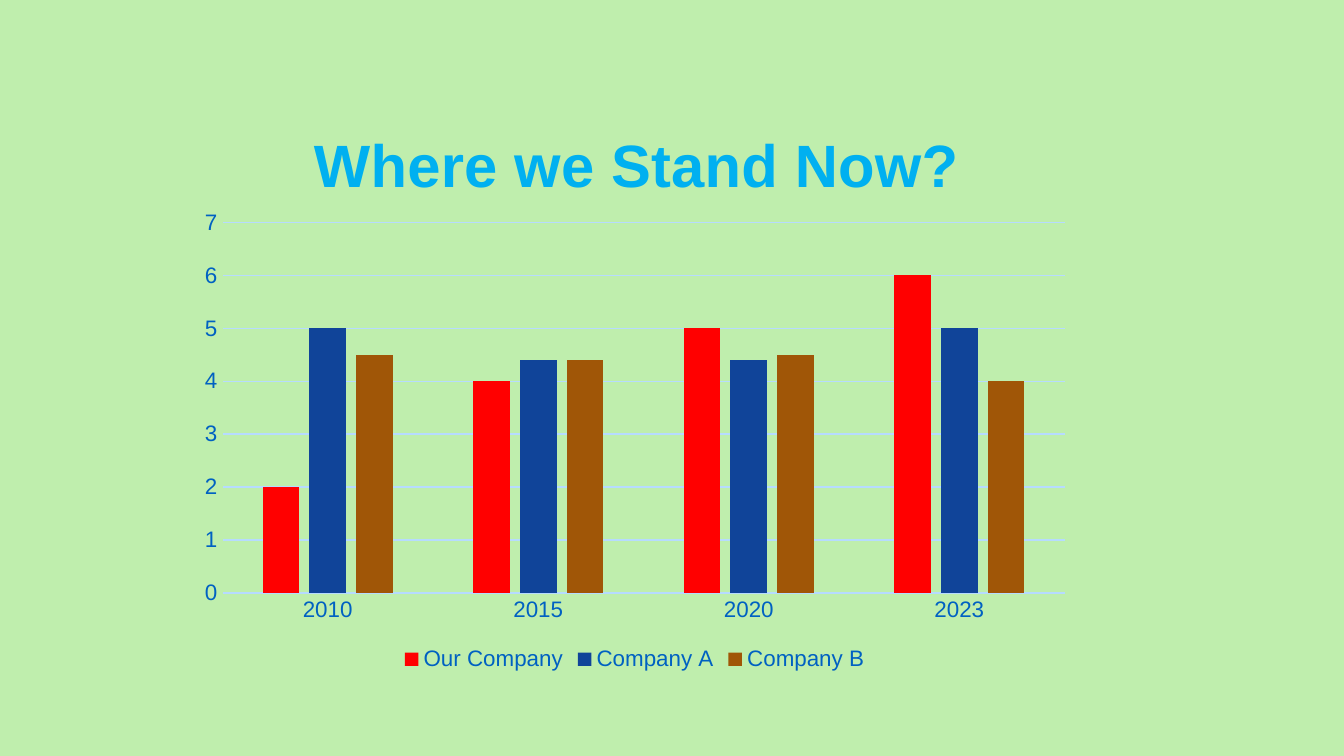
from lxml import etree
from pptx import Presentation
from pptx.chart.data import CategoryChartData
from pptx.dml.color import RGBColor
from pptx.enum.chart import XL_CHART_TYPE, XL_LEGEND_POSITION, XL_TICK_MARK
from pptx.oxml.ns import qn
from pptx.util import Pt

COLUMN = XL_CHART_TYPE.COLUMN_CLUSTERED
BOTTOM = XL_LEGEND_POSITION.BOTTOM
NO_TICK = XL_TICK_MARK.NONE

GREEN = RGBColor(0xBF, 0xEE, 0xAD)
INK = RGBColor(0x00, 0x0C, 0x18)
SKY = RGBColor(0x00, 0xB0, 0xF0)
LABEL = RGBColor(0x00, 0x61, 0xC2)
GRID = RGBColor(0xB6, 0xDB, 0xFF)
RED = RGBColor(0xFF, 0x00, 0x00)
NAVY = RGBColor(0x10, 0x44, 0x99)
BROWN = RGBColor(0xA0, 0x56, 0x07)

FONT = "Arial"
YEARS = ["2010", "2015", "2020", "2023"]
SERIES = [
    ("Our Company", [2, 4, 5, 6], RED),
    ("Company A", [5, 4.4, 4.4, 5], NAVY),
    ("Company B", [4.5, 4.4, 4.5, 4], BROWN),
]


def set_font(font, size, color, bold=False):
    font.name = FONT
    font.size = Pt(size)
    font.color.rgb = color
    font.bold = bold


def set_line(line, color):
    line.color.rgb = color
    line.width = Pt(0.75)


def set_place(part, index, **values):
    """Place a chart part by fractions of the chart's size."""
    for old in part.findall(qn("c:layout")):
        part.remove(old)
    layout = etree.Element(qn("c:layout"))
    manual = etree.SubElement(layout, qn("c:manualLayout"))
    for name, value in values.items():
        etree.SubElement(manual, qn("c:" + name)).set("val", str(value))
    part.insert(index, layout)


def add_title(chart):
    title = chart.chart_title
    frame = title.text_frame
    frame.text = "Where we Stand Now?"
    set_font(frame.paragraphs[0].runs[0].font, 32, SKY, True)
    set_place(title._element, 1, xMode="edge", yMode="edge", x=0.13, y=0.06)


def style_axes(chart):
    for axis in (chart.category_axis, chart.value_axis):
        axis.major_tick_mark = NO_TICK
        axis.minor_tick_mark = NO_TICK
        set_font(axis.tick_labels.font, 12, LABEL)
    set_line(chart.category_axis.format.line, GRID)
    scale = chart.value_axis
    scale.minimum_scale, scale.maximum_scale = 0, 7
    scale.major_unit = 1
    scale.format.line.fill.background()
    set_line(scale.major_gridlines.format.line, GRID)


def style_bars(chart):
    plot = chart.plots[0]
    plot.vary_by_categories = False
    plot.gap_width = 219
    plot.overlap = -27
    for bars, (_, _, color) in zip(plot.series, SERIES):
        bars.format.fill.solid()
        bars.format.fill.fore_color.rgb = color
    area = chart.value_axis._element.getparent()
    set_place(area, 0, layoutTarget="inner", xMode="edge", yMode="edge",
              x=0.04, y=0.24, w=0.94, h=0.62)


def add_legend(chart):
    chart.has_legend = True
    chart.legend.position = BOTTOM
    chart.legend.include_in_layout = False
    set_font(chart.legend.font, 12, LABEL)


def add_chart(slide):
    data = CategoryChartData()
    data.categories = YEARS
    for name, values, _ in SERIES:
        data.add_series(name, values)
    frame = slide.shapes.add_chart(
        COLUMN, Pt(100), Pt(42.5), Pt(480), Pt(320), data)
    chart = frame.chart
    set_font(chart.font, 10, INK)
    add_title(chart)
    style_axes(chart)
    style_bars(chart)
    add_legend(chart)


def main():
    deck = Presentation()
    deck.slide_width, deck.slide_height = Pt(720), Pt(405)
    slide = deck.slides.add_slide(deck.slide_layouts[6])

    # Background
    fill = slide.background.fill
    fill.solid()
    fill.fore_color.rgb = GREEN

    # Company comparison
    add_chart(slide)
    deck.save("out.pptx")


if __name__ == "__main__":
    main()
